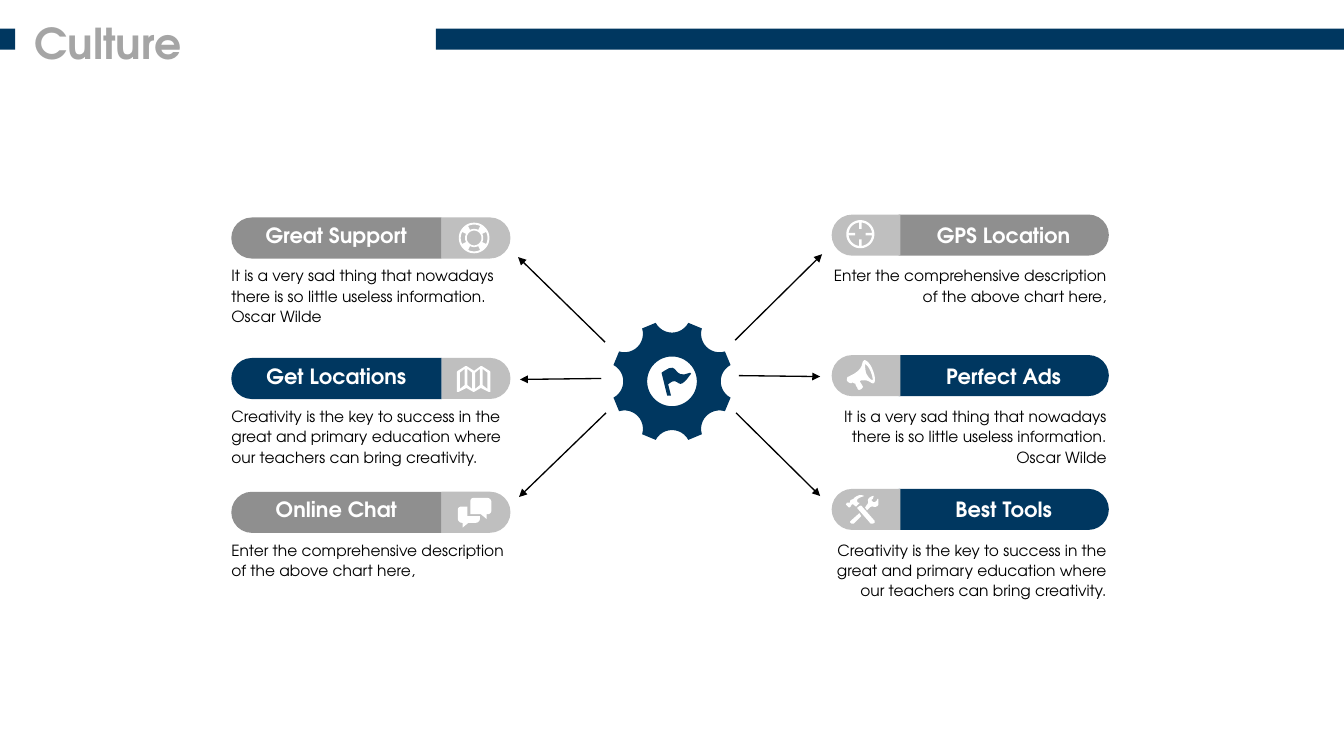
from dataclasses import dataclass
from math import cos, radians, sin

from lxml import etree
from pptx import Presentation
from pptx.dml.color import RGBColor
from pptx.enum.shapes import MSO_CONNECTOR, MSO_SHAPE
from pptx.enum.text import MSO_ANCHOR, MSO_AUTO_SIZE, PP_ALIGN
from pptx.oxml.ns import qn
from pptx.util import Inches, Pt

RECTANGLE = MSO_SHAPE.RECTANGLE
HALF_PILL = MSO_SHAPE.ROUND_2_SAME_RECTANGLE
STRAIGHT = MSO_CONNECTOR.STRAIGHT
LEFT, CENTER, RIGHT = PP_ALIGN.LEFT, PP_ALIGN.CENTER, PP_ALIGN.RIGHT
TOP = MSO_ANCHOR.TOP
NO_AUTOFIT = MSO_AUTO_SIZE.NONE


@dataclass(frozen=True)
class Theme:
    font: str = "TeX Gyre Adventor"
    navy: str = "003760"
    gray: str = "8F8F8F"
    silver: str = "BFBFBF"
    title: str = "A5A5A5"
    white: str = "FFFFFF"
    black: str = "000000"
    title_size: float = 32
    label_size: float = 15.8
    body_size: float = 11.6


@dataclass(frozen=True)
class Side:
    body_center: float
    cap_center: float
    rise: float
    text_left: float
    align: int
    body_turn: int
    cap_turn: int


THEME = Theme()
LEFT_SIDE = Side(3.52, 4.98, 0, 2.29, LEFT, 270, 90)
RIGHT_SIDE = Side(10.5, 9.06, 0.03, 8.55, RIGHT, 90, 270)
ROWS = (2.49, 3.96, 5.36)
PILL_HEIGHT, BODY_WIDTH, CAP_WIDTH = 0.43, 2.2, 0.72

QUOTE = "It is a very sad thing that nowadays there is so little useless information. Oscar Wilde"
CREATIVITY = ("Creativity is the key to success in the great and primary education "
              "where our teachers can bring creativity.")
DESCRIPTION = "Enter the comprehensive description of the above chart here,"

CARDS = (
    (LEFT_SIDE, ROWS[0], "Great Support", QUOTE, THEME.gray),
    (LEFT_SIDE, ROWS[1], "Get Locations", CREATIVITY, THEME.navy),
    (LEFT_SIDE, ROWS[2], "Online Chat", DESCRIPTION, THEME.gray),
    (RIGHT_SIDE, ROWS[0], "GPS Location", DESCRIPTION, THEME.gray),
    (RIGHT_SIDE, ROWS[1], "Perfect Ads", QUOTE, THEME.navy),
    (RIGHT_SIDE, ROWS[2], "Best Tools", CREATIVITY, THEME.navy),
)

ARROWS = (
    ((6.33, 3.58), (5.42, 2.69)), ((6.29, 3.96), (5.44, 3.97)), ((6.34, 4.32), (5.43, 5.2)),
    ((7.69, 3.56), (8.6, 2.66)), ((7.73, 3.93), (8.58, 3.94)), ((7.7, 4.32), (8.58, 5.19)),
)

FLAG = [[(30, 13), (11, 21, 19, 0, 3, 11), (0, 13), (6, 37), (10, 37), (7, 25),
         (20, 14, 15, 37, 31, 14)]]
CHAT = [
    [(10, 19), (10, 9), (4, 9), (2, 9, 0, 10, 0, 12), (0, 22), (0, 24, 2, 26, 4, 26),
     (5, 26), (5, 31), (11, 26), (19, 26), (21, 26, 23, 24, 23, 22), (23, 19)],
    [(31, 0), (16, 0), (14, 0, 13, 2, 13, 4), (13, 17), (24, 17), (30, 22), (30, 17),
     (31, 17), (33, 17, 35, 16, 35, 13), (35, 4), (35, 2, 33, 0, 31, 0)],
]
MEGAPHONE = [
    [(27, 11), (25, 5, 20, 0, 18, 1), (14, 3, 20, 10, 2, 18), (0, 18, 0, 21, 0, 22),
     (1, 24, 3, 25, 5, 25), (6, 24), (8, 26, 9, 25, 9, 26), (9, 27, 11, 30, 11, 30),
     (11, 31, 12, 32, 13, 32), (13, 32, 16, 31, 16, 30), (17, 29), (16, 27), (14, 24),
     (13, 23, 14, 22, 16, 22), (24, 21, 25, 26, 28, 25), (30, 24, 30, 18, 27, 11)],
    [(27, 22), (26, 22, 22, 19, 20, 14), (19, 10, 19, 5, 19, 5), (20, 5, 23, 8, 25, 13),
     (27, 18, 27, 21, 27, 22)],
]
TOOLS = [
    [(6, 10), (7, 9, 8, 10, 10, 12), (11, 12), (11, 12, 13, 9, 14, 9), (14, 8),
     (13, 8, 12, 8, 12, 7), (9, 3, 21, 1, 19, 1), (18, 0, 14, 0, 14, 0),
     (12, 1, 9, 2, 8, 4), (6, 5, 5, 5, 5, 5), (4, 6, 5, 7, 4, 8), (1, 8), (0, 10),
     (3, 13), (4, 13), (5, 12)],
    [(16, 11), (15, 11), (12, 13), (12, 14), (26, 30), (28, 30), (30, 29), (30, 27)],
    [(34, 4), (33, 4), (32, 6), (31, 7, 30, 8, 28, 7), (26, 5, 27, 5, 28, 4),
     (28, 4, 29, 2, 29, 1), (28, 1), (28, 1, 24, 2, 23, 5), (23, 7, 24, 8, 22, 10),
     (20, 13), (22, 16), (25, 13), (26, 12, 27, 12, 28, 12), (31, 13, 33, 12, 34, 10),
     (34, 8, 34, 5, 34, 4)],
    [(5, 27), (4, 28, 4, 29, 5, 29), (6, 30), (8, 30), (16, 22), (14, 19)],
]


def arc(radius, start, end, center=(0, 0), steps=12):
    angles = [radians(start + (end - start) * step / steps) for step in range(steps + 1)]
    return [(center[0] + radius * cos(a), center[1] + radius * sin(a)) for a in angles]


def circle(radius):
    return arc(radius, 0, 360, steps=48)


def gear():
    rim = []
    for turn in range(0, 360, 45):
        notch = (70.3 * cos(radians(turn)), 70.3 * sin(radians(turn)))
        rim += arc(19.3, turn + 242, turn + 118, notch)
    return [rim, circle(26)]


def lifebuoy():
    slots = [arc(14, turn - 27, turn + 27) + arc(9.5, turn + 27, turn - 27)
             for turn in range(0, 360, 90)]
    return [circle(16), circle(7.7)] + slots


def crosshair():
    inside = []
    for turn in range(0, 360, 90):
        c, s = cos(radians(turn)), sin(radians(turn))
        inside += [(x * c - y * s, x * s + y * c) for x, y in ((5.5, -1.3), (5.5, 1.3))]
        inside += arc(12.3, turn + 6, turn + 84)
    return [circle(14.7), inside]


def folded_map():
    sheet = [(34, 5), (26, 0), (25, 0), (18, 5), (10, 0), (9, 0), (1, 5), (0, 6), (0, 27),
             (2, 27), (10, 23), (17, 27), (18, 27), (25, 23), (33, 27), (35, 27), (35, 6)]
    panels = []
    for index in range(4):
        left = 3 + 8 * index
        first, second = (7, 3) if index % 2 == 0 else (3, 7)
        panels.append([(left, first), (left + 5, second),
                       (left + 5, second + 17), (left, first + 17)])
    return [sheet] + panels


def flatten(contour, steps=8):
    points = [contour[0]]
    for segment in contour[1:]:
        if len(segment) == 2:
            points.append(segment)
            continue
        knots = (points[-1], segment[:2], segment[2:4], segment[4:])
        for step in range(1, steps + 1):
            t = step / steps
            weights = ((1 - t) ** 3, 3 * t * (1 - t) ** 2, 3 * t * t * (1 - t), t ** 3)
            points.append(tuple(sum(w * knot[axis] for w, knot in zip(weights, knots))
                                for axis in (0, 1)))
    return points


def paint(shape, color):
    shape.shadow.inherit = False
    shape.fill.solid()
    shape.fill.fore_color.rgb = RGBColor.from_string(color)
    shape.line.fill.background()


def add_icon(slide, contours, x, y, color=THEME.white):
    outlines = [[(Inches(x + px / 100), Inches(y + py / 100)) for px, py in flatten(contour)]
                for contour in contours]
    builder = slide.shapes.build_freeform(*outlines[0][0], scale=1.0)
    for index, outline in enumerate(outlines):
        if index:
            builder.move_to(*outline[0])
        builder.add_line_segments(outline[1:], close=True)
    paint(builder.convert_to_shape(), color)


def add_bar(slide, left, width):
    paint(slide.shapes.add_shape(RECTANGLE, Inches(left), Inches(0.3), Inches(width),
                                 Inches(0.22)), THEME.navy)


def add_half_pill(slide, x, y, length, turn, color):
    shape = slide.shapes.add_shape(HALF_PILL, Inches(x - PILL_HEIGHT / 2), Inches(y - length / 2),
                                   Inches(PILL_HEIGHT), Inches(length))
    shape.adjustments[0] = 0.5
    shape.rotation = turn
    paint(shape, color)


def write(shape, text, size, color, align, bold=False, inset=(0.13, 0.06), spacing=1.0):
    frame = shape.text_frame
    frame.text = text
    frame.auto_size = NO_AUTOFIT
    frame.word_wrap = True
    frame.vertical_anchor = TOP
    frame.margin_left = frame.margin_right = Inches(inset[0])
    frame.margin_top = frame.margin_bottom = Inches(inset[1])
    paragraph = frame.paragraphs[0]
    paragraph.alignment = align
    paragraph.line_spacing = spacing
    font = paragraph.runs[0].font
    font.name, font.size, font.bold = THEME.font, Pt(size), bold
    font.color.rgb = RGBColor.from_string(color)


def add_text(slide, left, top, width, height, *content, **style):
    box = slide.shapes.add_textbox(Inches(left), Inches(top), Inches(width), Inches(height))
    write(box, *content, **style)


def add_card(slide, side, row, label, description, color):
    y = row - side.rise
    add_half_pill(slide, side.body_center, y, BODY_WIDTH, side.body_turn, color)
    add_half_pill(slide, side.cap_center, y, CAP_WIDTH, side.cap_turn, THEME.silver)
    add_text(slide, side.body_center - BODY_WIDTH / 2, row - 0.22, BODY_WIDTH, 0.39,
             label, THEME.label_size, THEME.white, CENTER, bold=True)
    add_text(slide, side.text_left, row + 0.22, 3.16, 0.77,
             description, THEME.body_size, THEME.black, side.align, spacing=1.1)


def add_arrow(slide, start, end):
    arrow = slide.shapes.add_connector(STRAIGHT, *(Inches(value) for value in start + end))
    arrow.line.width = Pt(1)
    arrow.line.color.rgb = RGBColor.from_string(THEME.black)
    properties = arrow._element.spPr
    etree.SubElement(properties.find(qn("a:ln")), qn("a:tailEnd"), type="triangle")
    etree.SubElement(properties, qn("a:effectLst"))


def set_title(slide, text):
    title = slide.shapes.title
    title.left, title.top = Inches(0.36), Inches(0.18)
    title.width, title.height = Inches(1.56), Inches(0.54)
    write(title, text, THEME.title_size, THEME.title, LEFT, bold=True, inset=(0, 0))
    title.text_frame.word_wrap = False


def main():
    presentation = Presentation()
    presentation.slide_width, presentation.slide_height = Inches(14.06), Inches(7.91)
    slide = presentation.slides.add_slide(presentation.slide_layouts[5])
    set_title(slide, "Culture")
    add_bar(slide, 0, 0.16)
    add_bar(slide, 4.56, 9.5)
    for card in CARDS:
        add_card(slide, *card)
    for start, end in ARROWS:
        add_arrow(slide, start, end)
    add_icon(slide, gear(), 7.03, 3.99, THEME.navy)
    add_icon(slide, FLAG, 6.92, 3.77, THEME.navy)
    add_icon(slide, lifebuoy(), 4.96, 2.49)
    add_icon(slide, folded_map(), 4.78, 3.83)
    add_icon(slide, CHAT, 4.79, 5.21)
    add_icon(slide, crosshair(), 9, 2.45)
    add_icon(slide, MEGAPHONE, 8.86, 3.76)
    add_icon(slide, TOOLS, 8.85, 5.18)
    presentation.save("out.pptx")


if __name__ == "__main__":
    main()
